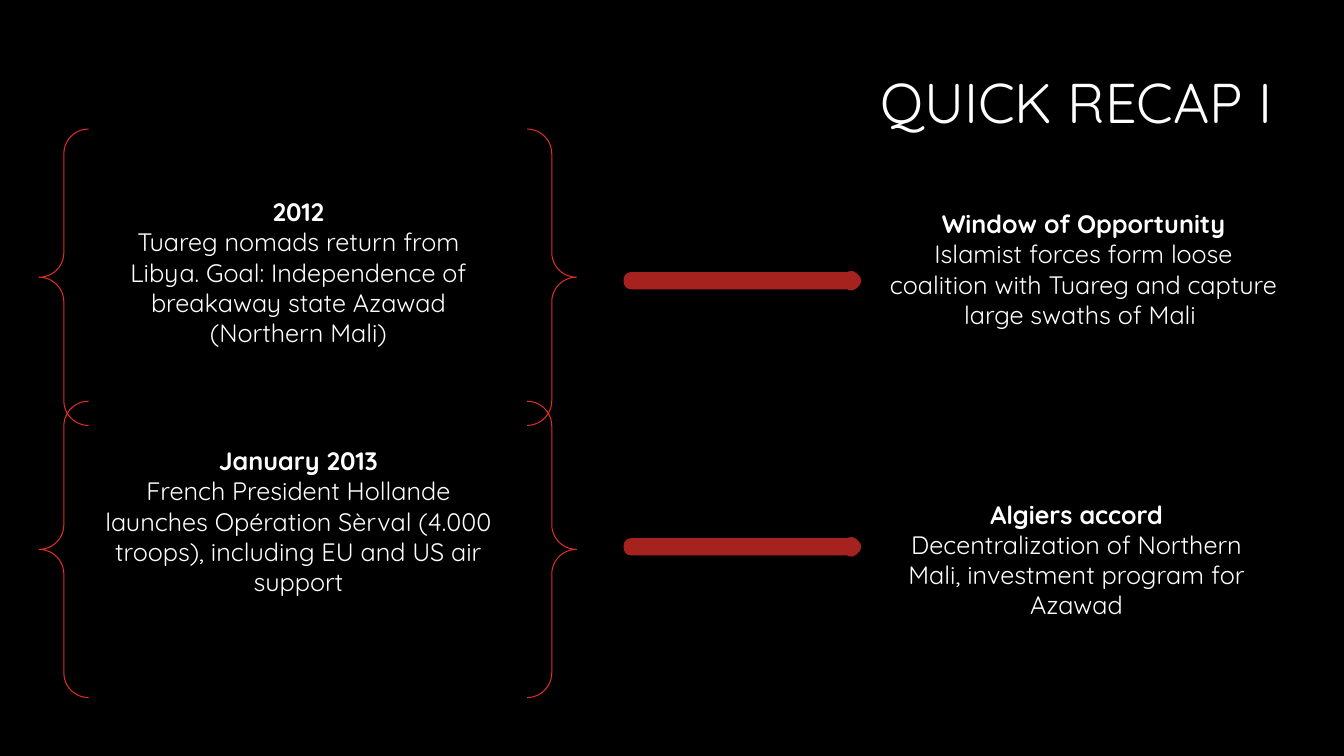
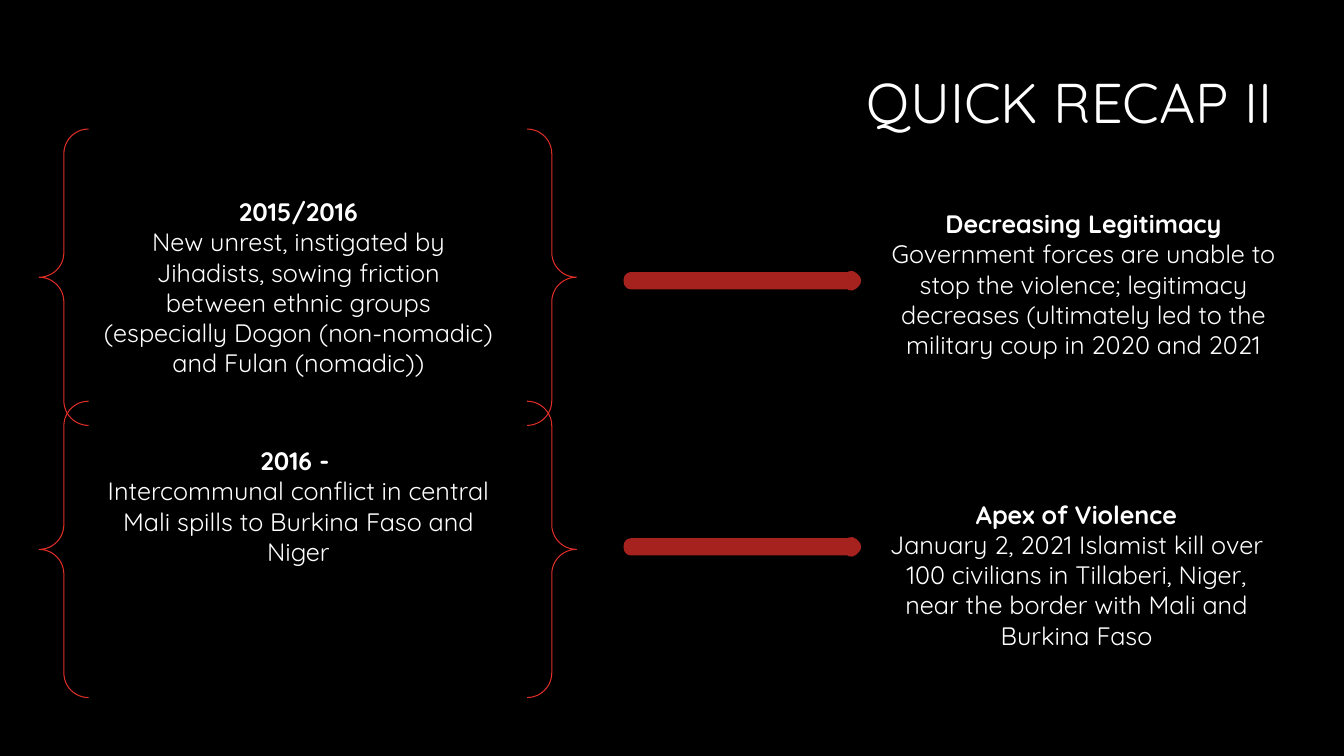
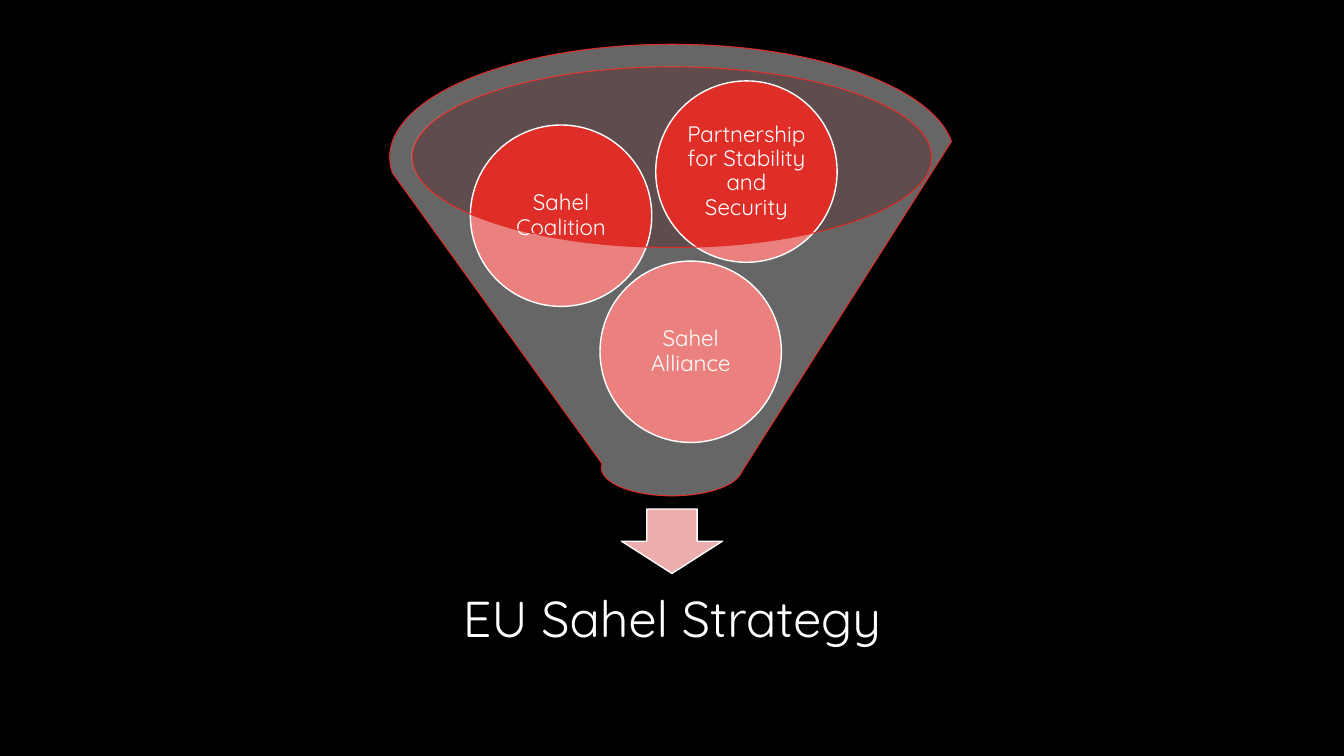
from pptx import Presentation
from pptx import util as u
from pptx.dml import color
from pptx.enum import shapes, text
from pptx.oxml import ns
from lxml import etree

Pt = u.Pt
SHAPE = shapes.MSO_SHAPE
FONT = "Quicksand"
BLACK, WHITE, RED, DARK_RED = "000000", "FFFFFF", "DF2E28", "A5221E"
PALE_PINK, PINK = "F0BEBE", "ECADAD"


def add_shape(slide, kind, box, fill=None, line=None, width=0.75, opacity=100):
    shape = slide.shapes.add_shape(kind, *[Pt(value) for value in box])
    shape.shadow.inherit = False
    if fill:
        shape.fill.solid()
        shape.fill.fore_color.rgb = color.RGBColor.from_string(fill)
        if opacity < 100:
            tint = shape.fill._xPr.find(".//" + ns.qn("a:srgbClr"))
            etree.SubElement(tint, ns.qn("a:alpha"), val=str(opacity * 1000))
    else:
        shape.fill.background()
    if line:
        shape.line.color.rgb = color.RGBColor.from_string(line)
        shape.line.width = Pt(width)
    else:
        shape.line.fill.background()
    return shape


def write(shape, lines, size, align=text.PP_ALIGN.CENTER, spacing=None,
          anchor=text.MSO_ANCHOR.MIDDLE, inset=None):
    """Each line is a (wording, bold) pair and becomes a paragraph."""
    frame = shape.text_frame
    frame.word_wrap = True
    frame.vertical_anchor = anchor
    if inset is not None:
        frame.margin_left = frame.margin_right = Pt(inset)
        frame.margin_top = frame.margin_bottom = Pt(inset)
    for index, (wording, bold) in enumerate(lines):
        paragraph = frame.add_paragraph() if index else frame.paragraphs[0]
        paragraph.alignment = align
        if spacing:
            paragraph.line_spacing = spacing
        run = paragraph.add_run()
        run.text = wording
        run.font.name = FONT
        run.font.size = Pt(size)
        run.font.bold = bold
        run.font.color.rgb = color.RGBColor.from_string(WHITE)


presentation = Presentation()
presentation.slide_width, presentation.slide_height = Pt(960), Pt(540)
blank = presentation.slide_layouts[6]
background = presentation.slide_master.background.fill
background.solid()
background.fore_color.rgb = color.RGBColor.from_string(BLACK)

# Recap rows: tops of brace and arrow, then left and top of cause and effect
ROWS = [
    (92.2, 198.7, (67, 136.8), (627.8, 145.4)),
    (286.6, 388.8, (67, 314.6), (622.8, 352.8)),
]

# Per row: cause, then effect, each as heading, body and box height
RECAPS = [
    ("QUICK RECAP I", [
        (("2012", "Tuareg nomads return from Libya. Goal: Independence of "
          "breakaway state Azawad (Northern Mali)", 116.6),
         ("Window of Opportunity", "Islamist forces form loose coalition with "
          "Tuareg and capture large swaths of Mali ", 94.3)),
        (("January 2013", "French President Hollande launches Opération Sèrval "
          "(4.000 troops), including EU and US air support", 116.6),
         ("Algiers accord", "Decentralization of Northern Mali, investment "
          "program for Azawad", 94.3)),
    ]),
    ("QUICK RECAP II", [
        (("2015/2016", "New unrest, instigated by Jihadists, sowing friction "
          "between ethnic groups (especially Dogon (non-nomadic) and Fulan "
          "(nomadic))", 159.8),
         ("Decreasing Legitimacy", "Government forces are unable to stop the "
          "violence; legitimacy decreases (ultimately led to the military coup "
          "in 2020 and 2021", 116.6)),
        (("2016 - ", "Intercommunal conflict in central Mali spills to Burkina "
          "Faso and Niger", 94.3),
         ("Apex of Violence", "January 2, 2021 Islamist kill over 100 civilians "
          "in Tillaberi, Niger, near the border with Mali and Burkina Faso",
          116.6)),
    ]),
]

# Recap slides
for title, events in RECAPS:
    slide = presentation.slides.add_slide(blank)
    title_box = slide.shapes.add_textbox(Pt(237.6), Pt(24.5), Pt(678.2), Pt(101.5))
    write(title_box, [(title, False)], 40, text.PP_ALIGN.RIGHT, 0.9)
    for (brace_top, arrow_top, *places), event in zip(ROWS, events):
        add_shape(slide, SHAPE.DOUBLE_BRACE, (28, brace_top, 383.8, 211.7), line=RED)
        add_shape(slide, SHAPE.RIGHT_ARROW, (450.7, arrow_top, 159.1, 3.6),
                  RED, DARK_RED, 10.5)
        for (left, top), (heading, body, height) in zip(places, event):
            box = slide.shapes.add_textbox(Pt(left), Pt(top), Pt(292.3), Pt(height))
            write(box, [(heading, True), (body, False)], 18,
                  anchor=text.MSO_ANCHOR.TOP)
            box.text_frame.auto_size = text.MSO_AUTO_SIZE.SHAPE_TO_FIT_TEXT

# Strategy slide: funnel mouth, arrow and result
slide = presentation.slides.add_slide(blank)
add_shape(slide, SHAPE.OVAL, (293.8, 47.5, 371.5, 129), PALE_PINK, opacity=40)
add_shape(slide, SHAPE.DOWN_ARROW, (444, 363.6, 72, 46), PINK, WHITE, 1)
result = slide.shapes.add_textbox(Pt(307.2), Pt(400.3), Pt(345.6), Pt(86.4))
write(result, [("EU Sahel Strategy", False)], 36, spacing=0.9, inset=20)

# Initiatives, seen through the funnel
for name, left, top in [
    ("Sahel Alliance", 428.6, 186.5),
    ("Sahel Coalition", 336, 89.3),
    ("Partnership for Stability and Security", 468.4, 57.8),
]:
    circle = add_shape(slide, SHAPE.OVAL, (left, top, 129.6, 129.6), RED, WHITE, 1)
    write(circle, [(name, False)], 16, spacing=0.9, inset=1.6)
add_shape(slide, SHAPE.FUNNEL, (278.4, 31.6, 403.2, 322.6), WHITE, RED, opacity=40)

presentation.save("out.pptx")
